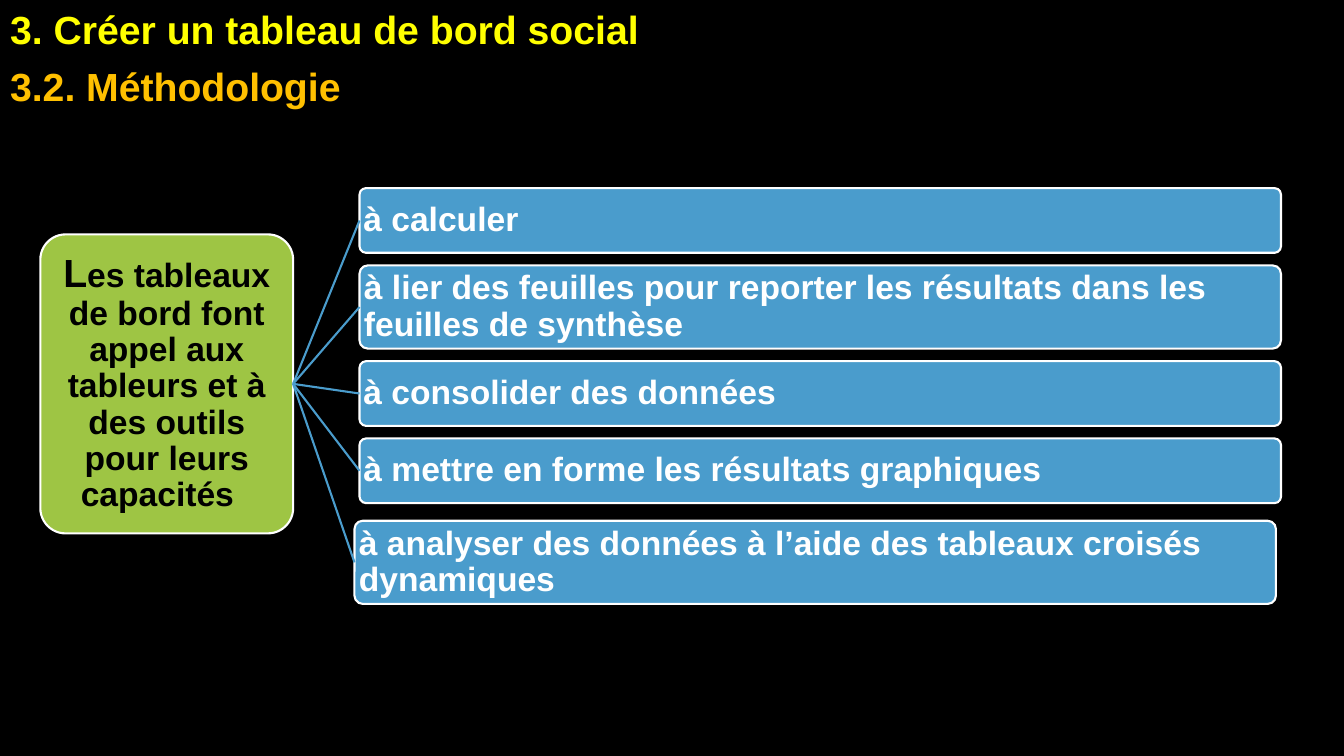
import pptx
import pptx.util
import pptx.dml.color
import pptx.enum.shapes
import pptx.enum.text
import pptx.oxml.ns
import lxml.etree

RGB = pptx.dml.color.RGBColor
BLACK = RGB(0x00, 0x00, 0x00)
WHITE = RGB(0xFF, 0xFF, 0xFF)
YELLOW = RGB(0xFF, 0xFF, 0x00)
AMBER = RGB(0xFF, 0xC0, 0x00)
GREEN = RGB(0x9E, 0xC5, 0x44)
BLUE = RGB(0x4A, 0x9C, 0xCC)
ALIGN = pptx.enum.text.PP_ALIGN
ANCHOR = pptx.enum.text.MSO_ANCHOR

COLS, ROWS = 160, 90
BAR_LEFT, BAR_WIDTH, BAR_TOP = 42.8, 109.7, 22.4
LOW, TALL, GAP = 7.7, 9.9, 1.5
BARS = [
    ("à calculer", LOW, 0),
    ("à lier des feuilles pour reporter les résultats dans les feuilles de synthèse", TALL, 0),
    ("à consolider des données", LOW, 0),
    ("à mettre en forme les résultats graphiques", LOW, 0),
    ("à analyser des données à l’aide des tableaux croisés dynamiques", TALL, 0.6),
]


class Deck:
    face, large, small, stroke, inset = "Arial", 28, 24, 1.5, 0.02

    def __init__(self):
        self.file = pptx.Presentation()
        self.file.slide_width = pptx.util.Inches(13.333)
        self.file.slide_height = pptx.util.Inches(7.5)
        self.slide = self.file.slides.add_slide(self.file.slide_layouts[1])
        back = self.slide.background.fill
        back.solid()
        back.fore_color.rgb = BLACK

    def frame(self, left, top, width, height):
        col = self.file.slide_width / COLS
        row = self.file.slide_height / ROWS
        return round(left * col), round(top * row), round(width * col), round(height * row)

    def style(self, font, size, color):
        font.name, font.size, font.bold = self.face, pptx.util.Pt(size), True
        font.color.rgb = color

    def head(self, slot, text, color, box):
        shape = self.slide.placeholders[slot]
        shape.left, shape.top, shape.width, shape.height = self.frame(*box)
        body = shape.text_frame
        body.text = text
        body.word_wrap = True
        body.auto_size = pptx.enum.text.MSO_AUTO_SIZE.NONE
        body.vertical_anchor = ANCHOR.TOP
        para = body.paragraphs[0]
        para.alignment = ALIGN.LEFT
        para.space_before = pptx.util.Pt(0)
        self.style(para.font, self.large, color)
        props = para._p.get_or_add_pPr()
        props.set("marL", "0")
        props.set("indent", "0")
        props.insert_element_before(
            lxml.etree.Element(pptx.oxml.ns.qn("a:buNone")), "a:tabLst", "a:defRPr", "a:extLst")

    def card(self, parts, fill, color, align, box):
        kind = pptx.enum.shapes.MSO_SHAPE.ROUNDED_RECTANGLE
        shape = self.slide.shapes.add_shape(kind, *self.frame(*box))
        shape.adjustments[0] = 0.1
        shape.shadow.inherit = False
        shape.fill.solid()
        shape.fill.fore_color.rgb = fill
        shape.line.color.rgb = WHITE
        shape.line.width = pptx.util.Pt(self.stroke)
        body = shape.text_frame
        body.word_wrap = True
        body.vertical_anchor = ANCHOR.MIDDLE
        edge = pptx.util.Inches(self.inset)
        body.margin_left = body.margin_right = body.margin_top = body.margin_bottom = edge
        para = body.paragraphs[0]
        para.alignment = align
        para.line_spacing = 0.9
        for text, size in parts:
            run = para.add_run()
            run.text = text
            if len(parts) > 1:
                self.style(run.font, size, color)
        if len(parts) == 1:
            self.style(para.font, parts[0][1], color)
        return shape

    def link(self, start, end):
        kind = pptx.enum.shapes.MSO_CONNECTOR.STRAIGHT
        line = self.slide.shapes.add_connector(kind, 0, 0, 0, 0)
        line.begin_connect(start, 3)
        line.end_connect(end, 1)
        line.line.color.rgb = BLUE
        line.line.width = pptx.util.Pt(self.stroke)
        lxml.etree.SubElement(line._element.spPr, pptx.oxml.ns.qn("a:effectLst"))


def main():
    deck = Deck()
    deck.head(0, "3. Créer un tableau de bord social", YELLOW, (0, 0, 131.3, 6.8))
    deck.head(1, "3.2. Méthodologie", AMBER, (0, 6.8, 42.2, 6.8))
    topic = [
        ("L", deck.large),
        ("es tableaux de bord font appel aux tableurs et à des outils pour leurs capacités  ", deck.small),
    ]
    root = deck.card(topic, GREEN, BLACK, ALIGN.CENTER, (4.8, 27.9, 30.1, 35.6))
    top = BAR_TOP
    for text, height, shift in BARS:
        box = (BAR_LEFT - shift, top + shift, BAR_WIDTH, height)
        bar = deck.card([(text, deck.small)], BLUE, WHITE, ALIGN.LEFT, box)
        deck.link(root, bar)
        top += height + GAP
    deck.file.save("out.pptx")


if __name__ == "__main__":
    main()
